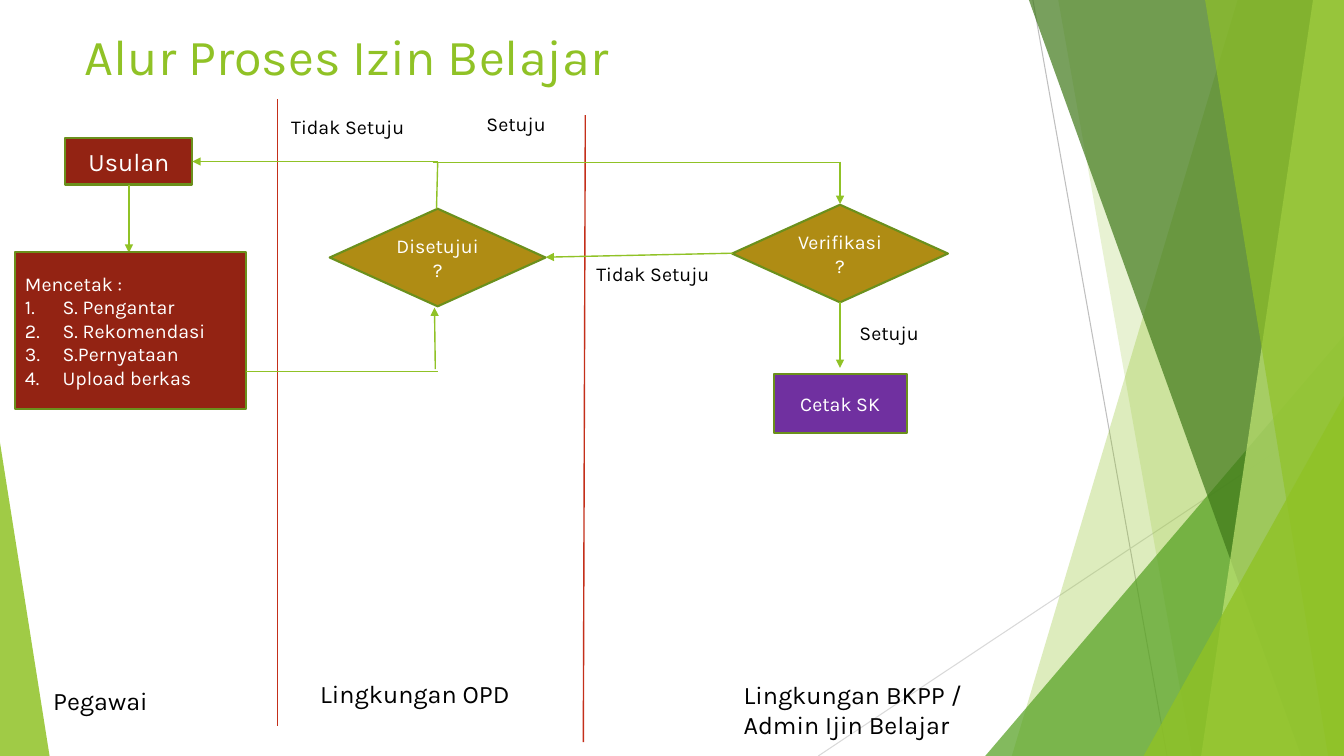
import pptx
import pptx.util
import pptx.dml.color
import pptx.enum.shapes
import pptx.enum.text
import pptx.oxml.ns
import pptx.oxml.xmlchemy

Cm = pptx.util.Cm
Pt = pptx.util.Pt
RGBColor = pptx.dml.color.RGBColor
SHAPE = pptx.enum.shapes.MSO_SHAPE
STRAIGHT = pptx.enum.shapes.MSO_CONNECTOR.STRAIGHT
ANCHOR = pptx.enum.text.MSO_ANCHOR
ALIGN = pptx.enum.text.PP_ALIGN
AUTO_SIZE = pptx.enum.text.MSO_AUTO_SIZE
qn = pptx.oxml.ns.qn
new_element = pptx.oxml.xmlchemy.OxmlElement

BLACK = RGBColor(0x00, 0x00, 0x00)
WHITE = RGBColor(0xFF, 0xFF, 0xFF)
GREEN = RGBColor(0x90, 0xC2, 0x26)
LEAF = RGBColor(0x54, 0xA0, 0x21)
FOREST = RGBColor(0x3F, 0x78, 0x19)
LIME = RGBColor(0xC0, 0xE4, 0x74)
OLIVE = RGBColor(0x6B, 0x90, 0x1C)
MAROON = RGBColor(0x93, 0x23, 0x13)
OCHRE = RGBColor(0xAF, 0x8C, 0x14)
PURPLE = RGBColor(0x70, 0x30, 0xA0)
RED = RGBColor(0xC4, 0x2F, 0x1A)
GRAY = RGBColor(0xBF, 0xBF, 0xBF)
PALE_GRAY = RGBColor(0xD9, 0xD9, 0xD9)

SLIDE_WIDTH, SLIDE_HEIGHT = 33.87, 19.05
LANE_TOP, LANE_HEIGHT = 2.5, 16.2
DIAMOND = (5.44, 2.46)

LABEL_FRAME = {"word_wrap": True, "auto_size": AUTO_SIZE.SHAPE_TO_FIT_TEXT}
TITLE_FRAME = {"word_wrap": True, "vertical_anchor": ANCHOR.TOP}
STEP_FRAME = {"word_wrap": True, "vertical_anchor": ANCHOR.MIDDLE}


def apply_format(target, values):
    for name, value in values.items():
        setattr(target, name, value)


def write(frame, lines, size, color, frame_format, align):
    apply_format(frame, frame_format)
    for index, line in enumerate(lines):
        paragraph = frame.paragraphs[0] if index == 0 else frame.add_paragraph()
        paragraph.alignment = align
        run = paragraph.add_run()
        run.text = line
        apply_format(run.font, {"name": "Karla", "size": Pt(size)})
        run.font.color.rgb = color


def add_label(slide, box, wording, size=14, color=BLACK, frame_format=LABEL_FRAME):
    label = slide.shapes.add_textbox(*map(Cm, box))
    write(label.text_frame, [wording], size, color, frame_format, ALIGN.LEFT)


def add_step(slide, kind, box, lines, fill, size=14, align=ALIGN.CENTER):
    step = slide.shapes.add_shape(kind, *map(Cm, box))
    step.shadow.inherit = False
    step.fill.solid()
    step.fill.fore_color.rgb = fill
    step.line.color.rgb = OLIVE
    step.line.width = Pt(1.5)
    write(step.text_frame, lines, size, WHITE, STEP_FRAME, align)
    return step


def add_line(slide, start, end, color=GREEN, width=1, arrow=False):
    line = slide.shapes.add_connector(STRAIGHT, *map(Cm, (*start, *end)))
    line.line.color.rgb = color
    line.line.width = Pt(width)
    properties = line._element.spPr
    if arrow:
        tail = new_element("a:tailEnd")
        tail.set("type", "triangle")
        properties.find(qn("a:ln")).append(tail)
    properties.append(new_element("a:effectLst"))


def tint(facet, color, opacity):
    facet.shadow.inherit = False
    facet.fill.solid()
    facet.fill.fore_color.rgb = color
    alpha = new_element("a:alpha")
    alpha.set("val", str(opacity * 1000))
    facet._element.spPr.find(qn("a:solidFill"))[0].append(alpha)
    facet.line.fill.background()


def add_band(slide, box, top_x, bottom_x, color, opacity):
    left, top, width, height = box
    right, bottom = left + width, top + height
    corners = [(left + top_x, top), (right, top), (right, bottom), (left + bottom_x, bottom)]
    points = [(Cm(x), Cm(y)) for x, y in corners]
    builder = slide.shapes.build_freeform(*points[0], scale=1.0)
    builder.add_line_segments(points[1:], close=True)
    tint(builder.convert_to_shape(), color, opacity)


def add_corner(slide, box, apex, color, opacity):
    corner = slide.shapes.add_shape(SHAPE.ISOSCELES_TRIANGLE, *map(Cm, box))
    corner.adjustments[0] = apex
    tint(corner, color, opacity)


def draw_facets(slide, box):
    left, top, width, height = box
    right, bottom = left + width, top + height

    def corner(corner_width, corner_height, color, opacity):
        place = (right - corner_width, bottom - corner_height, corner_width, corner_height)
        add_corner(slide, place, 1, color, opacity)

    add_line(slide, (left + 5.41, top), (left + 8.79, bottom), GRAY, 0.75)
    add_line(slide, (right, top + 10.24), (left, bottom), PALE_GRAY, 0.75)
    add_band(slide, box, 10.57, 4.88, GREEN, 30)
    add_band(slide, box, 6.05, 9.42, GREEN, 20)
    corner(9.04, 10.59, LEAF, 72)
    add_band(slide, box, 5.31, 12.17, FOREST, 70)
    add_band(slide, box, 12.47, 9.65, LIME, 70)
    add_band(slide, box, 9.75, 12.85, GREEN, 65)
    corner(5.05, 9.07, GREEN, 80)


def draw_employee_lane(slide, box):
    left, top, width, height = box
    center = left + 3.25
    add_step(slide, SHAPE.RECTANGLE, (center - 1.6, top + 0.98, 3.2, 1.17), ["Usulan"], MAROON, 18)
    add_line(slide, (center, top + 2.17), (center, top + 3.87), arrow=True)
    documents = ["Mencetak :", "S. Pengantar", "S. Rekomendasi", "S.Pernyataan", "Upload berkas"]
    printing = add_step(slide, SHAPE.RECTANGLE, (left + 0.38, top + 3.85, 5.82, 3.96),
                        documents, MAROON, align=ALIGN.LEFT)
    for paragraph in printing.text_frame.paragraphs[1:]:
        properties = paragraph._p.get_or_add_pPr()
        properties.set("marL", str(Cm(0.95)))
        properties.set("indent", str(-Cm(0.95)))
        number = new_element("a:buAutoNum")
        number.set("type", "arabicPeriod")
        properties.append(number)
    add_line(slide, (left + width, top), (left + width, top + 15.8), RED)
    add_label(slide, (left + 1.09, top + 14.65, 3.5, 1.07), "Pegawai", 18)


def draw_department_lane(slide, box):
    left, top, width, height = box
    add_line(slide, (left + width, top + 0.4), (left + width - 0.05, top + height), RED)
    add_step(slide, SHAPE.DIAMOND, (left + 1.31, top + 2.76, *DIAMOND), ["Disetujui?"], OCHRE)
    add_label(slide, (left + 0.09, top + 0.27, 3.99, 0.86), "Tidak Setuju")
    add_label(slide, (left + 5.01, top + 0.19, 2.46, 0.86), "Setuju")
    add_label(slide, (left + 0.82, top + 14.47, 6.07, 1.02), "Lingkungan OPD", 18)


def draw_agency_lane(slide, box):
    left, top, width, height = box
    center = left + 6.42
    add_step(slide, SHAPE.DIAMOND, (center - 2.72, top + 2.66, *DIAMOND), ["Verifikasi?"], OCHRE)
    add_line(slide, (center, top + 5.1), (center, top + 6.77), arrow=True)
    add_step(slide, SHAPE.RECTANGLE, (center - 1.67, top + 6.92, 3.35, 1.5), ["Cetak SK"], PURPLE)
    add_label(slide, (left + 6.66, top + 5.45, 3.99, 0.86), "Setuju")
    add_label(slide, (left + 0.03, top + 3.98, 3.99, 0.86), "Tidak Setuju")
    add_label(slide, (left + 3.74, top + 14.49, 6.38, 1.8), "Lingkungan BKPP / Admin Ijin Belajar", 18)


def draw_lane_links(slide, box):
    left, top, width, height = box
    links = [
        ((6.2, 6.86), (11.03, 6.86), False),
        ((10.97, 6.8), (10.95, 5.25), True),
        ((11.03, 1.6), (11.0, 2.76), False),
        ((11.03, 1.57), (4.85, 1.57), True),
        ((10.9, 1.6), (21.17, 1.6), False),
        ((21.17, 1.57), (21.17, 2.64), True),
        ((18.47, 3.88), (13.75, 3.98), True),
    ]
    for (x1, y1), (x2, y2), arrow in links:
        add_line(slide, (left + x1, top + y1), (left + x2, top + y2), arrow=arrow)


def main():
    deck = pptx.Presentation()
    apply_format(deck, {"slide_width": Cm(SLIDE_WIDTH), "slide_height": Cm(SLIDE_HEIGHT)})
    slide = deck.slides.add_slide(deck.slide_layouts[6])
    draw_facets(slide, (20.62, 0, SLIDE_WIDTH - 20.62, SLIDE_HEIGHT))
    add_corner(slide, (0, 11.15, 1.25, 7.9), 0, GREEN, 85)
    add_label(slide, (1.88, 0.51, 23.88, 3.66), "Alur Proses Izin Belajar", 36, GREEN, TITLE_FRAME)
    lane_left = 0
    lanes = [(draw_employee_lane, 7), (draw_department_lane, 7.75), (draw_agency_lane, 11)]
    for draw_lane, lane_width in lanes:
        draw_lane(slide, (lane_left, LANE_TOP, lane_width, LANE_HEIGHT))
        lane_left += lane_width
    draw_lane_links(slide, (0, LANE_TOP, lane_left, LANE_HEIGHT))
    deck.save("out.pptx")


if __name__ == "__main__":
    main()
